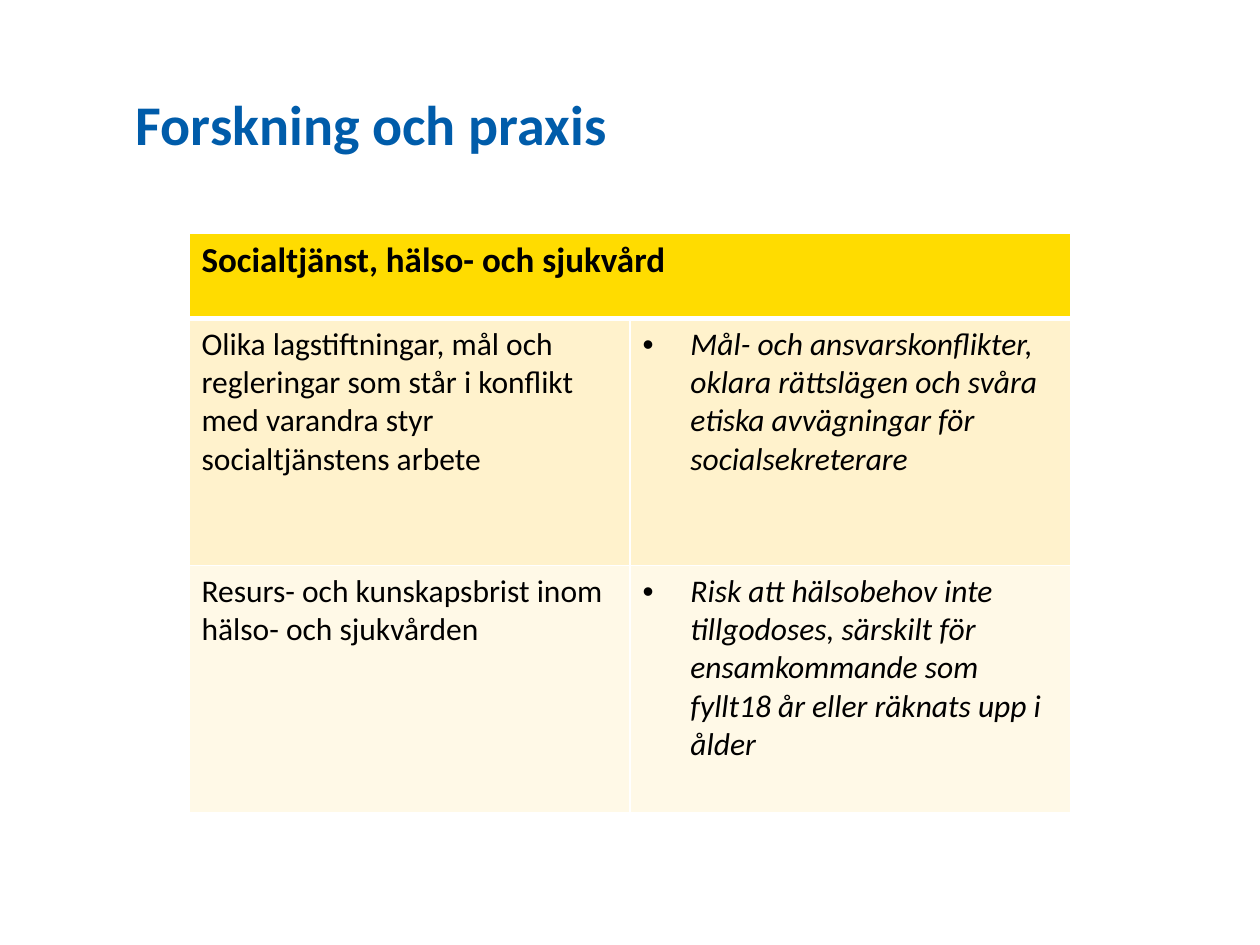
from lxml.etree import SubElement
from pptx import Presentation
from pptx.dml.color import RGBColor
from pptx.oxml.ns import qn
from pptx.util import Emu, Inches, Pt

COLORS = {
    "title": "005CAA",
    "text": "000000",
    "border": "FFFFFF",
    "header": "FFDC00",
    "odd": "FFF2CC",
    "even": "FFF9E7",
}
FONT = "Calibri"
HEADER = "Socialtjänst, hälso- och sjukvård"
FINDINGS = [
    (
        "Olika lagstiftningar, mål och regleringar som står i konflikt med varandra styr socialtjänstens arbete",
        "Mål- och ansvarskonflikter, oklara rättslägen och svåra etiska avvägningar för socialsekreterare",
    ),
    (
        "Resurs- och kunskapsbrist inom hälso- och sjukvården",
        "Risk att hälsobehov inte tillgodoses, särskilt för ensamkommande som fyllt18 år eller räknats upp i ålder",
    ),
]


def color(name):
    return RGBColor.from_string(COLORS[name])


def style(paragraph, size, color_name="text", bold=False, italic=False):
    font = paragraph.font
    font.name = FONT
    font.size = Pt(size)
    font.bold = bold
    font.italic = italic
    font.color.rgb = color(color_name)


def add_bullet(paragraph, indent=0.38):
    properties = paragraph._p.get_or_add_pPr()
    properties.set("marL", str(Inches(indent)))
    properties.set("indent", str(-Inches(indent)))
    SubElement(properties, qn("a:buFont"), typeface="Arial")
    SubElement(properties, qn("a:buChar"), char="•")


def set_borders(cell, top=1, bottom=1):
    properties = cell._tc.get_or_add_tcPr()
    for side, width in (("L", 1), ("R", 1), ("T", top), ("B", bottom)):
        line = SubElement(properties, qn(f"a:ln{side}"), w=str(Pt(width)))
        fill = SubElement(line, qn("a:solidFill"))
        SubElement(fill, qn("a:srgbClr"), val=COLORS["border"])


def fill_cell(cell, fill_name, top=1, bottom=1):
    set_borders(cell, top, bottom)
    cell.fill.solid()
    cell.fill.fore_color.rgb = color(fill_name)


def add_title(page, words):
    box = page.shapes.add_textbox(Inches(0.98), Inches(0.66), Inches(8.03), Inches(1.18))
    box.text_frame.word_wrap = True
    para = box.text_frame.paragraphs[0]
    para.text = words
    style(para, 32, "title", bold=True)


def add_findings(page, deck):
    width = Emu(int(deck.slide_width * 0.7))
    left = (deck.slide_width - width) // 2
    heights = [Inches(0.68)] + [Inches(1.96)] * len(FINDINGS)
    frame = page.shapes.add_table(len(heights), 2, left, Inches(1.85), width, sum(heights))
    table = frame.table
    for row, height in zip(table.rows, heights):
        row.height = height

    for cell in table.rows[0].cells:
        fill_cell(cell, "header", bottom=3)
    heading = table.cell(0, 0)
    heading.merge(table.cell(0, 1))
    heading.text = HEADER
    style(heading.text_frame.paragraphs[0], 20, bold=True)

    for number, texts in enumerate(FINDINGS, start=1):
        for column, words in enumerate(texts):
            cell = table.cell(number, column)
            fill_cell(cell, "odd" if number % 2 else "even", top=3 if number == 1 else 1)
            cell.text = words
            para = cell.text_frame.paragraphs[0]
            is_consequence = column == 1
            if is_consequence:
                add_bullet(para)
            style(para, 18, italic=is_consequence)


def main():
    deck = Presentation()
    deck.slide_width = Inches(10)
    deck.slide_height = Inches(7.5)
    page = deck.slides.add_slide(deck.slide_layouts[6])
    add_title(page, "Forskning och praxis")
    add_findings(page, deck)
    deck.save("out.pptx")


if __name__ == "__main__":
    main()
